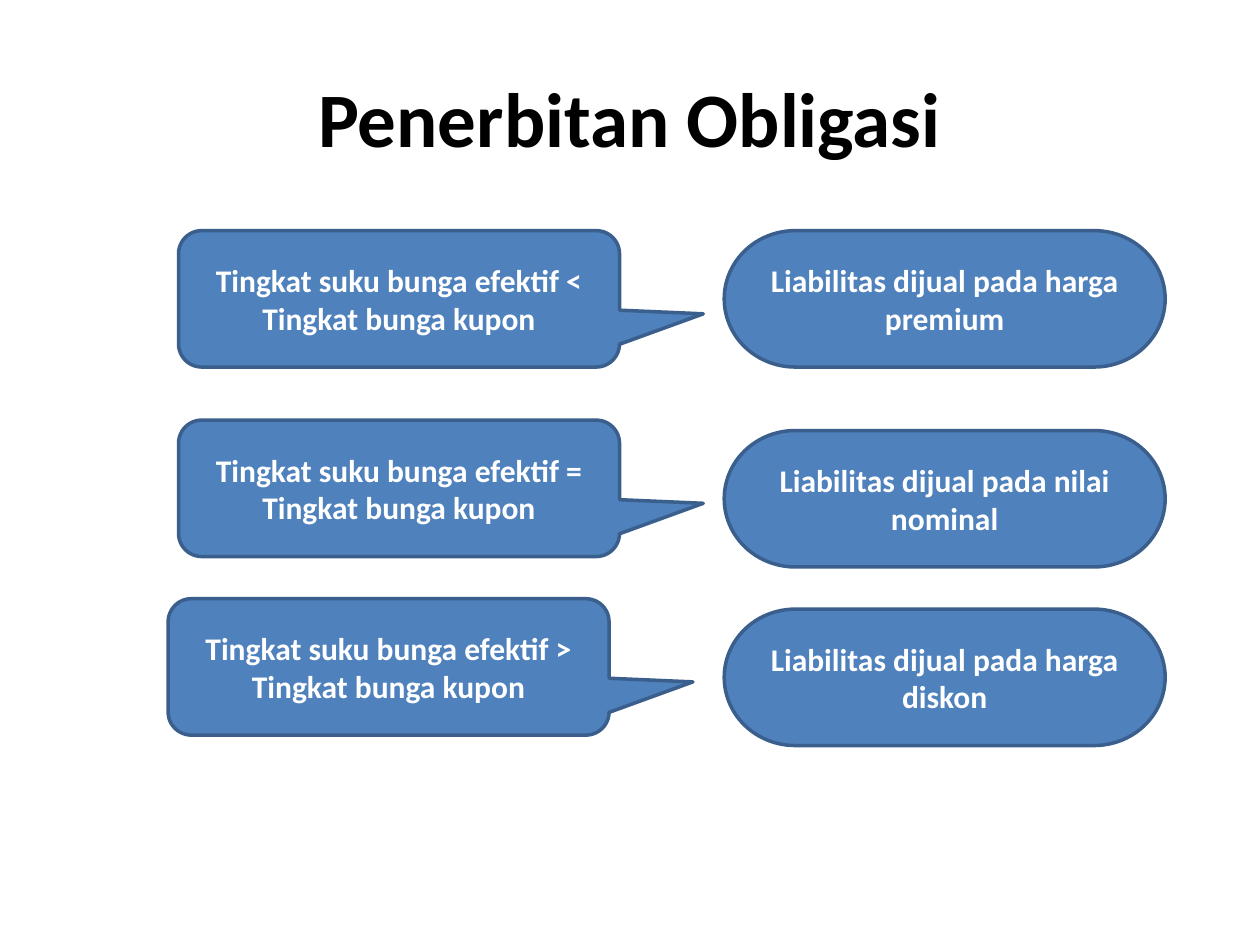
from dataclasses import dataclass

import pptx
import pptx.dml.color
import pptx.enum.shapes
import pptx.enum.text
import pptx.util

Cm = pptx.util.Cm
Pt = pptx.util.Pt
SHAPE = pptx.enum.shapes.MSO_SHAPE

COLORS = {"white": "FFFFFF", "black": "000000", "blue": "4F81BD", "outline": "3A5F8C"}
BOX_WIDTH, BOX_HEIGHT = 8.89, 2.75
RESULT_LEFT = 14.6
CALLOUT_ADJUSTMENTS = (0.69, 0.11, 0.17)


@dataclass
class BondCase:
    condition: str
    result: str
    left: float
    condition_top: float
    result_top: float


CASES = [
    BondCase("Tingkat suku bunga efektif < Tingkat bunga kupon",
             "Liabilitas dijual pada harga premium", 3.6, 4.65, 4.65),
    BondCase("Tingkat suku bunga efektif = Tingkat bunga kupon",
             "Liabilitas dijual pada nilai nominal", 3.6, 8.47, 8.68),
    BondCase("Tingkat suku bunga efektif > Tingkat bunga kupon",
             "Liabilitas dijual pada harga diskon", 3.39, 12.07, 12.28),
]


def rgb(name: str) -> pptx.dml.color.RGBColor:
    return pptx.dml.color.RGBColor.from_string(COLORS[name])


def write_text(sp, text: str, *, size: float, color: str) -> None:
    tf = sp.text_frame
    tf.word_wrap = True
    tf.vertical_anchor = pptx.enum.text.MSO_ANCHOR.MIDDLE
    p = tf.paragraphs[0]
    p.alignment = pptx.enum.text.PP_ALIGN.CENTER
    r = p.add_run()
    r.text = text
    r.font.name = "Calibri"
    r.font.size = Pt(size)
    r.font.bold = True
    r.font.color.rgb = rgb(color)


def add_box(slide, kind, left: float, top: float, text: str, *,
            width: float = BOX_WIDTH, height: float = BOX_HEIGHT,
            fill: str = "blue", line: str = "outline", line_width: float = 2,
            size: float = 18, color: str = "white"):
    """Draw a filled, outlined shape with centred text; lengths in cm."""
    sp = slide.shapes.add_shape(kind, Cm(left), Cm(top), Cm(width), Cm(height))
    sp.shadow.inherit = False
    sp.fill.solid()
    sp.fill.fore_color.rgb = rgb(fill)
    sp.line.color.rgb = rgb(line)
    sp.line.width = Pt(line_width)
    write_text(sp, text, size=size, color=color)
    return sp


def add_case(slide, case: BondCase) -> None:
    callout = add_box(slide, SHAPE.ROUNDED_RECTANGULAR_CALLOUT,
                      case.left, case.condition_top, case.condition)
    for i, value in enumerate(CALLOUT_ADJUSTMENTS):
        callout.adjustments[i] = value
    add_box(slide, SHAPE.FLOWCHART_TERMINATOR, RESULT_LEFT, case.result_top, case.result)


def main() -> None:
    prs = pptx.Presentation()
    prs.slide_width, prs.slide_height = Cm(25.4), Cm(19.05)
    slide = prs.slides.add_slide(prs.slide_layouts[6])
    add_box(slide, SHAPE.RECTANGLE, 1.27, 0.76, "Penerbitan Obligasi",
            width=22.86, height=3.18, fill="white", line="white",
            line_width=0.75, size=44, color="black")
    for case in CASES:
        add_case(slide, case)
    prs.save("out.pptx")


if __name__ == "__main__":
    main()
